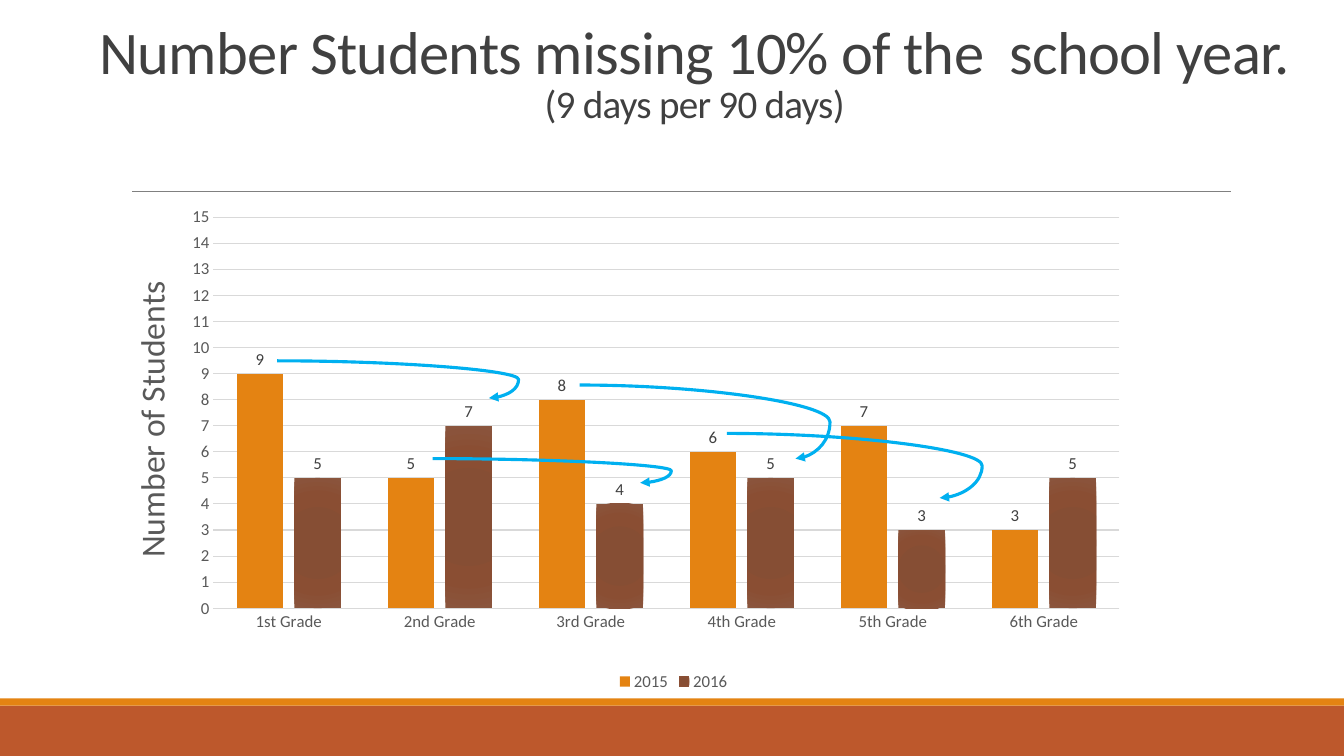
"""Build a slide charting students who miss 10% of the school year."""
from lxml import etree
from pptx import Presentation
from pptx.chart.data import CategoryChartData
from pptx.dml.color import RGBColor
from pptx.enum.chart import XL_CHART_TYPE, XL_LABEL_POSITION, XL_LEGEND_POSITION, XL_TICK_MARK
from pptx.enum.shapes import MSO_CONNECTOR, MSO_SHAPE
from pptx.enum.text import MSO_ANCHOR, PP_ALIGN
from pptx.oxml import parse_xml
from pptx.oxml.ns import nsdecls, qn
from pptx.util import Inches, Pt

COLUMNS = XL_CHART_TYPE.COLUMN_CLUSTERED
OUTSIDE = XL_LABEL_POSITION.OUTSIDE_END
BOTTOM = XL_LEGEND_POSITION.BOTTOM
NO_TICK = XL_TICK_MARK.NONE
CURVE, STRAIGHT = MSO_CONNECTOR.CURVE, MSO_CONNECTOR.STRAIGHT
RECT = MSO_SHAPE.RECTANGLE
TOP, CENTER = MSO_ANCHOR.TOP, PP_ALIGN.CENTER

THEME = {
    "font": "Calibri",
    "title": "404040", "axis": "595959", "grid": "D9D9D9", "rule": "808080",
    "orange": "E48312", "rust": "BD582C", "arrow": "00B0F0",
    "brown": [(0, "874C32"), (34, "864E34"), (70, "8A4E33"), (100, "8A553D")],
    "title_size": 43.2, "subtitle_size": 27.9, "axis_title_size": 24, "chart_size": 12,
}


def set_font(font, size, color):
    font.name = THEME["font"]
    font.size = Pt(size)
    font.bold = False
    font.color.rgb = RGBColor.from_string(color)


def add_text(p, text, size, color, spacing=0):
    r = p.add_run()
    r.text = text
    set_font(r.font, size, color)
    if spacing:
        r.font._element.set("spc", str(int(spacing * 100)))


prs = Presentation()
prs.slide_width, prs.slide_height = Inches(13.33), Inches(7.5)
s = prs.slides.add_slide(prs.slide_layouts[6])

for top, height, color in [(7, 0.5, "rust"), (6.93, 0.07, "orange")]:
    sp = s.shapes.add_shape(RECT, 0, Inches(top), prs.slide_width, Inches(height))
    sp.shadow.inherit = False
    sp.fill.solid()
    sp.fill.fore_color.rgb = RGBColor.from_string(THEME[color])
    sp.line.fill.background()

tf = s.shapes.add_textbox(Inches(0.84), Inches(0.25), Inches(12.1), Inches(1.03)).text_frame
tf.word_wrap = True
tf.vertical_anchor = TOP
tf.margin_left = tf.margin_right = tf.margin_top = tf.margin_bottom = 0
for p, text, size in [
    (tf.paragraphs[0], "Number Students missing 10% of the  school year.", THEME["title_size"]),
    (tf.add_paragraph(), "(9 days per 90 days)", THEME["subtitle_size"]),
]:
    p.alignment = CENTER
    p.line_spacing = 0.85
    add_text(p, text, size, THEME["title"], spacing=-0.5)

data = CategoryChartData()
data.categories = ["1st Grade", "2nd Grade", "3rd Grade", "4th Grade", "5th Grade", "6th Grade"]
data.add_series("2015", [9, 5, 8, 6, 7, 3])
data.add_series("2016", [5, 7, 4, 5, 3, 5])
chart = s.shapes.add_chart(
    COLUMNS, Inches(1.22), Inches(1.93), Inches(10.92), Inches(4.97), data).chart
chart.has_title = False
set_font(chart.font, THEME["chart_size"], THEME["axis"])
chart.has_legend = True
chart.legend.position = BOTTOM
chart.legend.include_in_layout = False
set_font(chart.legend.font, THEME["chart_size"], THEME["axis"])

for axis in (chart.category_axis, chart.value_axis):
    axis.major_tick_mark = axis.minor_tick_mark = NO_TICK
    set_font(axis.tick_labels.font, THEME["chart_size"], THEME["axis"])
grades, students = chart.category_axis, chart.value_axis
students.minimum_scale, students.maximum_scale, students.major_unit = 0, 15, 1
students.format.line.fill.background()
for line, width in [(grades.format.line, 1), (students.major_gridlines.format.line, 0.75)]:
    line.color.rgb = RGBColor.from_string(THEME["grid"])
    line.width = Pt(width)
tf = students.axis_title.text_frame
add_text(tf.paragraphs[0], "Number of Students", THEME["axis_title_size"], THEME["axis"])
body = students.axis_title._element.find(".//" + qn("a:bodyPr"))
body.set("rot", "-5400000")
body.set("vert", "horz")

plot = chart.plots[0]
plot.gap_width, plot.overlap = 100, -24
plot.vary_by_categories = False
for series in plot.series:
    series.format.fill.solid()
    series.format.fill.fore_color.rgb = RGBColor.from_string(THEME["orange"])
    labels = series.data_labels
    labels.show_value = True
    labels.position = OUTSIDE
    set_font(labels.font, THEME["chart_size"], THEME["title"])

stops = "".join(f'<a:gs pos="{pos * 1000}"><a:srgbClr val="{color}"/></a:gs>'
                for pos, color in THEME["brown"])
gradient = parse_xml(
    f'<a:gradFill {nsdecls("a")} rotWithShape="1"><a:gsLst>{stops}</a:gsLst><a:path path="circle">'
    '<a:fillToRect l="100000" t="100000" r="100000" b="100000"/></a:path></a:gradFill>')
solid = plot.series[1]._element.find(qn("c:spPr")).find(qn("a:solidFill"))
solid.getparent().replace(solid, gradient)

area = chart._chartSpace.find(".//" + qn("c:plotArea"))
for old in area.findall(qn("c:layout")):
    area.remove(old)
layout = etree.Element(qn("c:layout"))
manual = etree.SubElement(layout, qn("c:manualLayout"))
for tag, value in [("layoutTarget", "inner"), ("xMode", "edge"), ("yMode", "edge"),
                   ("x", 0.082), ("y", 0.045), ("w", 0.823), ("h", 0.781)]:
    etree.SubElement(manual, qn("c:" + tag)).set("val", str(value))
area.insert(0, layout)

lines = [
    (STRAIGHT, 1.31, 1.9, 12.21, 1.9, None),
    (CURVE, 2.75, 3.58, 4.85, 3.95, 1.14),
    (CURVE, 4.29, 4.55, 6.35, 4.79, 1.15),
    (CURVE, 7.21, 4.3, 9.32, 4.94, 1.2),
    (CURVE, 5.75, 3.82, 7.89, 4.55, 1.16),
]
for kind, x1, y1, x2, y2, bend in lines:
    sp = s.shapes.add_connector(kind, Inches(x1), Inches(y1), Inches(x2), Inches(y2))
    sp.line.color.rgb = RGBColor.from_string(THEME["arrow" if bend else "rule"])
    sp.line.width = Pt(2.25 if bend else 0.5)
    props = sp._element.spPr
    etree.SubElement(props, qn("a:effectLst"))
    if bend:
        guide = etree.SubElement(props.find(".//" + qn("a:avLst")), qn("a:gd"))
        guide.set("name", "adj1")
        guide.set("fmla", f"val {round(bend * 100000)}")
        etree.SubElement(props.find(qn("a:ln")), qn("a:tailEnd")).set("type", "triangle")

prs.save("out.pptx")
